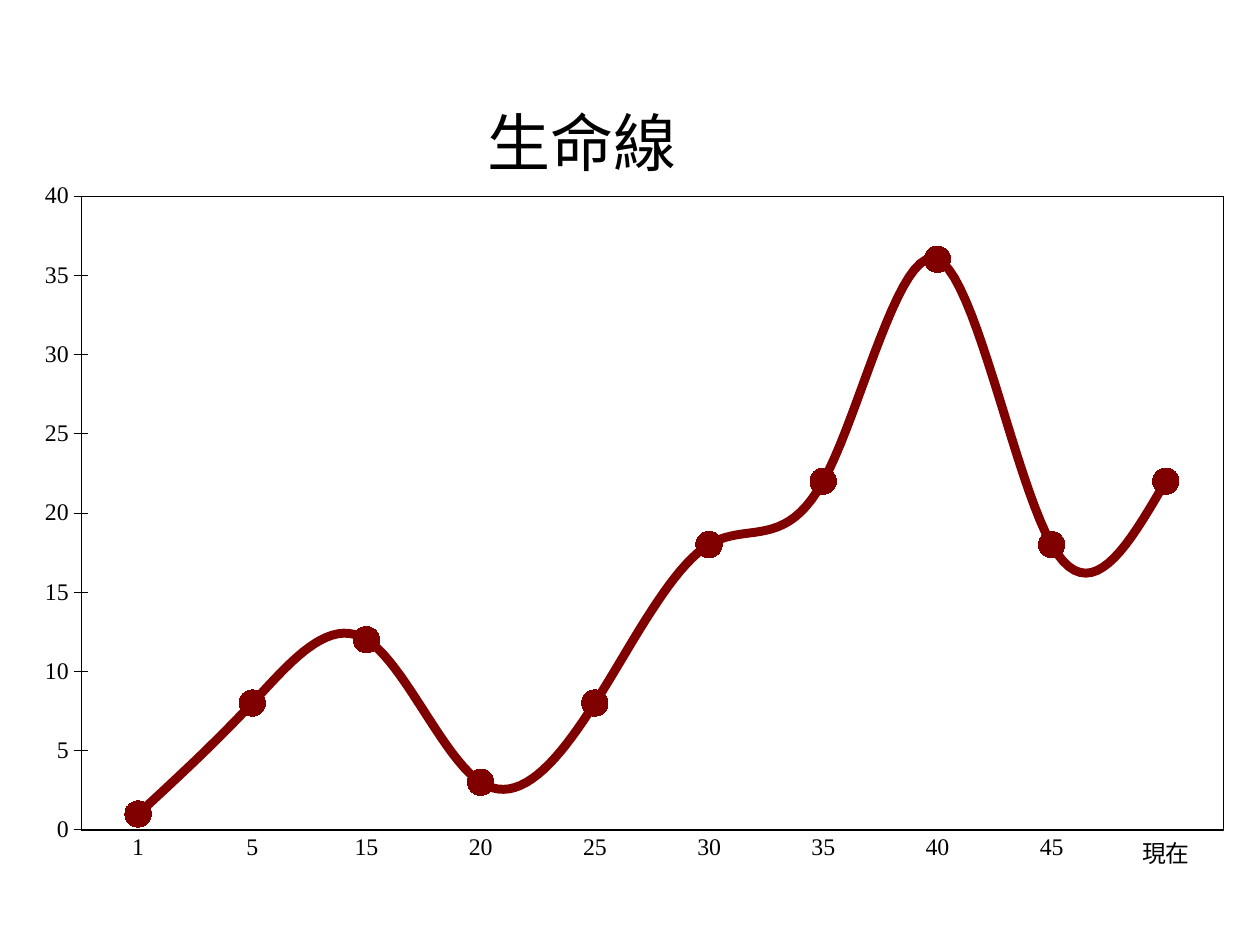
from lxml import etree
from pptx import Presentation
from pptx.chart.data import CategoryChartData
from pptx.dml.color import RGBColor
from pptx.enum.chart import XL_CHART_TYPE, XL_MARKER_STYLE, XL_TICK_MARK
from pptx.oxml import parse_xml
from pptx.oxml.ns import nsdecls, qn
from pptx.util import Emu, Pt

# Content
TITLE = "生命線"
SERIES_NAME = "Series 1"
LIFE_LINE = [
    ("1", 1), ("5", 8), ("15", 12), ("20", 3), ("25", 8),
    ("30", 18), ("35", 22), ("40", 36), ("45", 18), ("現在", 22),
]

# Geometry in px, 126 to the inch
SLIDE = (1260, 945)
CHART = (8, 0, 1236, 937)
PLOT = (81, 196, 1142, 634)
TITLE_AT = (476, 74)

BLACK = RGBColor(0x00, 0x00, 0x00)
MAROON = RGBColor(0x80, 0x00, 0x00)


def px(n):
    return Emu(round(n * 914400 / 126))


def set_font(font, size, name, color=BLACK):
    font.size, font.name, font.bold = Pt(size), name, False
    font.color.rgb = color


def add_text(tf, text, **fmt):
    r = tf.paragraphs[0].add_run()
    r.text = text
    set_font(r.font, **fmt)


def set_line(line, color, width):
    line.color.rgb, line.width = color, Pt(width)


def manual_layout(x, y, w=None, h=None):
    """Chart layout from slide px, as fractions of the chart frame."""
    left, top, width, height = CHART
    layout = etree.Element(qn("c:layout"))
    manual = etree.SubElement(layout, qn("c:manualLayout"))
    values = [("xMode", "edge"), ("yMode", "edge"),
              ("x", (x - left) / width), ("y", (y - top) / height)]
    if w:
        values.insert(0, ("layoutTarget", "inner"))
        values += [("w", w / width), ("h", h / height)]
    for tag, value in values:
        etree.SubElement(manual, qn("c:" + tag)).set("val", str(value))
    return layout


def place(parent, index, layout):
    for old in parent.findall(qn("c:layout")):
        parent.remove(old)
    parent.insert(index, layout)


prs = Presentation()
prs.slide_width, prs.slide_height = map(px, SLIDE)
s = prs.slides.add_slide(prs.slide_layouts[6])

# Chart
data = CategoryChartData()
data.categories = [age for age, _ in LIFE_LINE]
data.add_series(SERIES_NAME, [value for _, value in LIFE_LINE])
chart = s.shapes.add_chart(
    XL_CHART_TYPE.LINE_MARKERS_STACKED, *map(px, CHART), data).chart
chart.has_legend = False
set_font(chart.font, 13.6, "Times New Roman")

# Title
chart.has_title = True
add_text(chart.chart_title.text_frame, TITLE, size=36, name="Arial")
place(chart.chart_title._element, 1, manual_layout(*TITLE_AT))

# Axes
for axis, tick in ((chart.category_axis, XL_TICK_MARK.NONE),
                   (chart.value_axis, XL_TICK_MARK.CROSS)):
    axis.major_tick_mark, axis.minor_tick_mark = tick, XL_TICK_MARK.NONE
    axis.has_major_gridlines = False
    set_font(axis.tick_labels.font, 13.6, "Times New Roman")
    set_line(axis.format.line, BLACK, 0.42)
chart.value_axis.minimum_scale, chart.value_axis.maximum_scale = 0, 40
chart.value_axis.major_unit = 5

# Life line
plot = chart.plots[0]
plot.vary_by_categories = False
series = plot.series[0]
series.smooth = True
set_line(series.format.line, MAROON, 5.1)
marker = series.marker
marker.style, marker.size = XL_MARKER_STYLE.CIRCLE, 15
marker.format.fill.solid()
marker.format.fill.fore_color.rgb = MAROON
set_line(marker.format.line, MAROON, 0.42)

# Plot area position and frame
area = chart._chartSpace.chart.plotArea
place(area, 0, manual_layout(*PLOT))
area.append(parse_xml(
    f'<c:spPr {nsdecls("c", "a")}><a:noFill/><a:ln w="{Pt(0.42)}"><a:solidFill>'
    f'<a:srgbClr val="{BLACK}"/></a:solidFill></a:ln></c:spPr>'))

prs.save("out.pptx")
